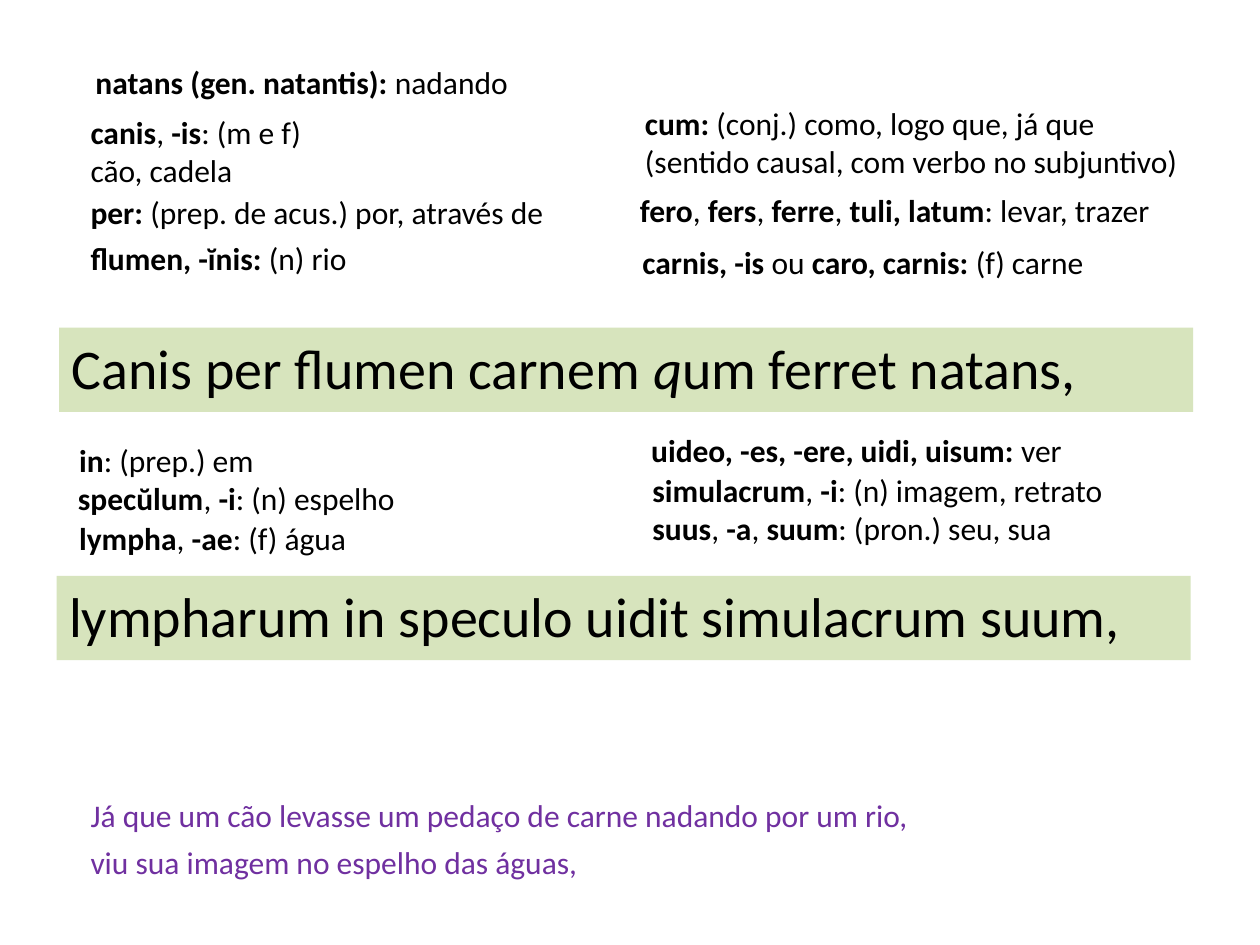
"""Build a Latin reading slide: two verses, their word notes and a translation."""
import pptx
import pptx.dml.color
import pptx.enum.text
import pptx.util

Inches = pptx.util.Inches


def color(hue):
    return pptx.dml.color.RGBColor.from_string(hue)


def write(left, top, width, height, text, size=18, hue="000000", style="bold", fill=None):
    """Place a text box; parts between asterisks take the given style."""
    box = deck_slide.shapes.add_textbox(Inches(left), Inches(top), Inches(width), Inches(height))
    if fill:
        box.fill.solid()
        box.fill.fore_color.rgb = color(fill)
    frame = box.text_frame
    frame.word_wrap = True
    if not fill:
        frame.auto_size = pptx.enum.text.MSO_AUTO_SIZE.SHAPE_TO_FIT_TEXT
    line = frame.paragraphs[0]
    line.font.name = "Calibri"
    line.font.size = pptx.util.Pt(size)
    line.font.color.rgb = color(hue)
    for index, part in enumerate(text.split("*")):
        if part:
            run = line.add_run()
            run.text = part
            if index % 2:
                setattr(run.font, style, True)


deck = pptx.Presentation()
deck.slide_width, deck.slide_height = Inches(10), Inches(7.5)
deck_slide = deck.slides.add_slide(deck.slide_layouts[6])

verses = [
    (0.47, 2.6, "Canis per flumen carnem *q*um ferret natans,"),
    (0.45, 4.57, "lympharum in speculo uidit simulacrum suum,"),
]
for left, top, text in verses:
    write(left, top, 9, 0.67, text, size=32, style="italic", fill="D7E4BD")

notes = [
    (0.66, 0.45, 4.17, 0.4, "*natans (gen. natantis): *nadando"),
    (0.62, 0.85, 2.28, 0.71, "*canis*, *-is*: (m e f) cão, cadela"),
    (0.62, 1.48, 3.99, 0.4, "*per: *(prep. de acus.) por, através de"),
    (0.62, 1.85, 2.28, 0.4, "*flumen, -ĭnis: *(n) rio"),
    (5.02, 0.78, 4.59, 0.71,
     "*cum: *(conj.) como, logo que, já que (sentido causal, com verbo no subjuntivo)"),
    (4.98, 1.47, 4.35, 0.4, "*fero*, *fers*, *ferre*, *tuli, latum*: levar, trazer"),
    (5, 1.88, 4.17, 0.4, "*carnis, -is *ou *caro, carnis: *(f) carne"),
    (0.53, 3.45, 4.17, 0.4, "*in*: (prep.) em"),
    (0.52, 3.75, 4.17, 0.4, "*specŭlum*, *-i*: (n) espelho"),
    (0.53, 4.07, 4.17, 0.4, "*lympha*, *-ae*: (f) água"),
    (5.07, 3.37, 4.17, 0.4, "*uideo, -es, -ere, uidi, uisum:* ver"),
    (5.08, 3.69, 4.17, 0.4, "*simulacrum*, *-i*: (n) imagem, retrato"),
    (5.08, 3.99, 4.17, 0.4, "*suus*, *-a*, *suum*: (pron.) seu, sua"),
]
for note in notes:
    write(*note)

gloss = [
    (6.27, "Já que um cão levasse um pedaço de carne nadando por um rio,"),
    (6.64, "viu sua imagem no espelho das águas,"),
]
for top, text in gloss:
    write(0.62, top, 8.98, 0.4, text, hue="7030A0")

deck.save("out.pptx")
